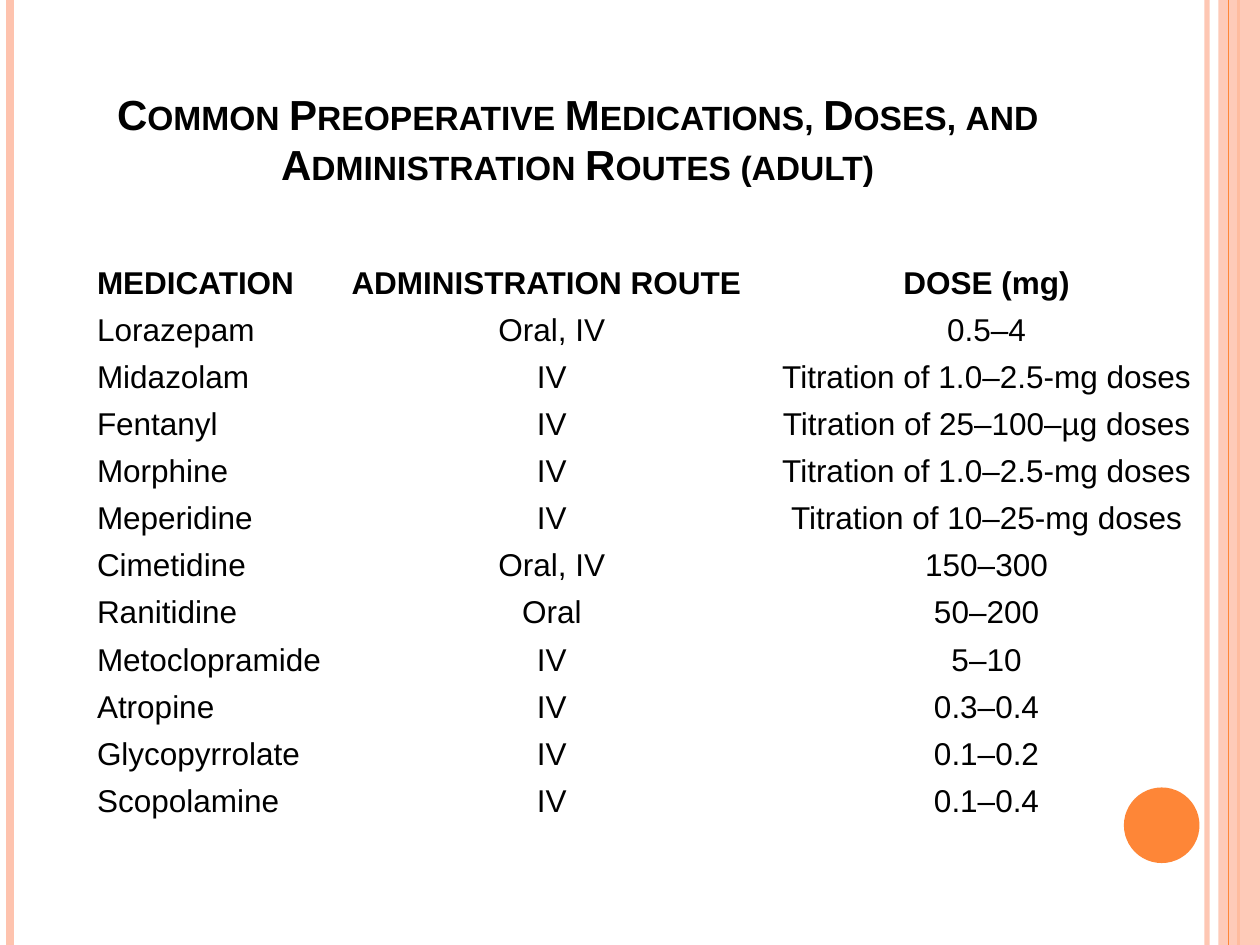
import pptx
import pptx.util
import pptx.dml.color
import pptx.enum.shapes
import pptx.enum.text
import pptx.oxml.ns
import pptx.oxml.xmlchemy
from lxml import etree

Inches, Pt = pptx.util.Inches, pptx.util.Pt
RGB = pptx.dml.color.RGBColor.from_string
SHAPE = pptx.enum.shapes.MSO_SHAPE
ALIGN = pptx.enum.text.PP_ALIGN
ANCHOR = pptx.enum.text.MSO_ANCHOR
qn = pptx.oxml.ns.qn

# Content
TITLE = "Common Preoperative Medications, Doses, and Administration Routes (adult)"
HEADER = ("MEDICATION", "ADMINISTRATION ROUTE", "DOSE (mg)")
MEDICATIONS = [
    ("Lorazepam", "Oral, IV", "0.5–4"),
    ("Midazolam", "IV", "Titration of 1.0–2.5-mg doses"),
    ("Fentanyl", "IV", "Titration of 25–100–µg doses"),
    ("Morphine", "IV", "Titration of 1.0–2.5-mg doses"),
    ("Meperidine", "IV", "Titration of 10–25-mg doses"),
    ("Cimetidine", "Oral, IV", "150–300"),
    ("Ranitidine", "Oral", "50–200"),
    ("Metoclopramide", "IV", "5–10"),
    ("Atropine", "IV", "0.3–0.4"),
    ("Glycopyrrolate", "IV", "0.1–0.2"),
    ("Scopolamine", "IV", "0.1–0.4"),
]

# Theme and layout
THEME = dict(font="Arial", text="000000", accent="FE8637", pale="FEC3AE",
             background="FFFFFF", title_size=24, table_size=18)
NO_STYLE = "{2D5ABB26-0587-4C30-8999-92F81FD0307C}"
COLUMNS = (2.02, 3.38, 3.52)
ROW_HEIGHT, LAST_HEIGHT = 0.37, 0.8
# x, colour, width in points, opacity in percent
BACK_RULES = [(9.58, "pale", 3, 93), (0.08, "pale", 4.5, 100), (9.83, "accent", 1.5, 100)]
FRONT_RULES = [(9.75, "accent", 0.75, 100)]


def set_text(tf, text, size, bold=False, align=ALIGN.LEFT, small_caps=False):
    p = tf.paragraphs[0]
    p.alignment = align
    r = p.add_run()
    r.text = text
    r.font.name, r.font.size, r.font.bold = THEME["font"], Pt(size), bold
    r.font.color.rgb = RGB(THEME["text"])
    if small_caps:
        r.font._element.set("cap", "small")


def set_opacity(sp, percent):
    color = sp._element.spPr.find(".//" + qn("a:srgbClr"))
    etree.SubElement(color, qn("a:alpha")).set("val", str(percent * 1000))


def add_rules(s, rules):
    for x, color, width, opacity in rules:
        line = s.shapes.add_connector(pptx.enum.shapes.MSO_CONNECTOR.STRAIGHT,
                                      Inches(x), 0, Inches(x), Inches(7.5))
        line.line.color.rgb = RGB(THEME[color])
        line.line.width = Pt(width)
        if opacity < 100:
            set_opacity(line, opacity)
        etree.SubElement(line._element.spPr, qn("a:effectLst"))


def add_block(s, kind, box, color, opacity=100):
    sp = s.shapes.add_shape(kind, *map(Inches, box))
    sp.shadow.inherit = False
    sp.fill.solid()
    sp.fill.fore_color.rgb = RGB(THEME[color])
    sp.line.fill.background()
    if opacity < 100:
        set_opacity(sp, opacity)


def add_medication_table(s):
    rows = [HEADER, *MEDICATIONS]
    heights = [ROW_HEIGHT] * len(rows) + [LAST_HEIGHT]
    table = s.shapes.add_table(len(heights), len(COLUMNS), Inches(0.67), Inches(2.06),
                               Inches(sum(COLUMNS)), Inches(sum(heights))).table
    table.first_row = table.horz_banding = False
    table._tbl.tblPr.find(qn("a:tableStyleId")).text = NO_STYLE
    for column, width in zip(table.columns, COLUMNS):
        column.width = Inches(width)
    for row, height in zip(table.rows, heights):
        row.height = Inches(height)
    for cell in table.iter_cells():
        cell.fill.background()
        cell.margin_top = cell.margin_bottom = Pt(3.4)
    for i, row in enumerate(rows):
        for j, text in enumerate(row):
            cell = table.cell(i, j)
            cell.vertical_anchor = ANCHOR.BOTTOM if i == 0 else ANCHOR.TOP
            left = j == 0 or (i == 0 and j == 1)
            set_text(cell.text_frame, text, THEME["table_size"], bold=i == 0,
                     align=ALIGN.LEFT if left else ALIGN.CENTER)
    last = len(heights) - 1
    table.cell(last, 0).merge(table.cell(last, len(COLUMNS) - 1))


def main():
    prs = pptx.Presentation()
    prs.slide_width, prs.slide_height = Inches(10), Inches(7.5)
    s = prs.slides.add_slide(prs.slide_layouts[5])
    s.background.fill.solid()
    s.background.fill.fore_color.rgb = RGB(THEME["background"])

    # Side bands and circle
    add_rules(s, BACK_RULES)
    add_block(s, SHAPE.RECTANGLE, (9.67, 0, 0.33, 7.5), "pale", opacity=87)
    add_rules(s, FRONT_RULES)
    add_block(s, SHAPE.OVAL, (8.92, 6.25, 0.6, 0.6), "accent")

    add_medication_table(s)

    # Title
    title = s.shapes.title
    title.left, title.top, title.width, title.height = map(Inches, (0.5, 0.3, 8.17, 1.25))
    title.text_frame.vertical_anchor = ANCHOR.BOTTOM
    set_text(title.text_frame, TITLE, THEME["title_size"], bold=True,
             align=ALIGN.CENTER, small_caps=True)

    prs.save("out.pptx")


if __name__ == "__main__":
    main()
